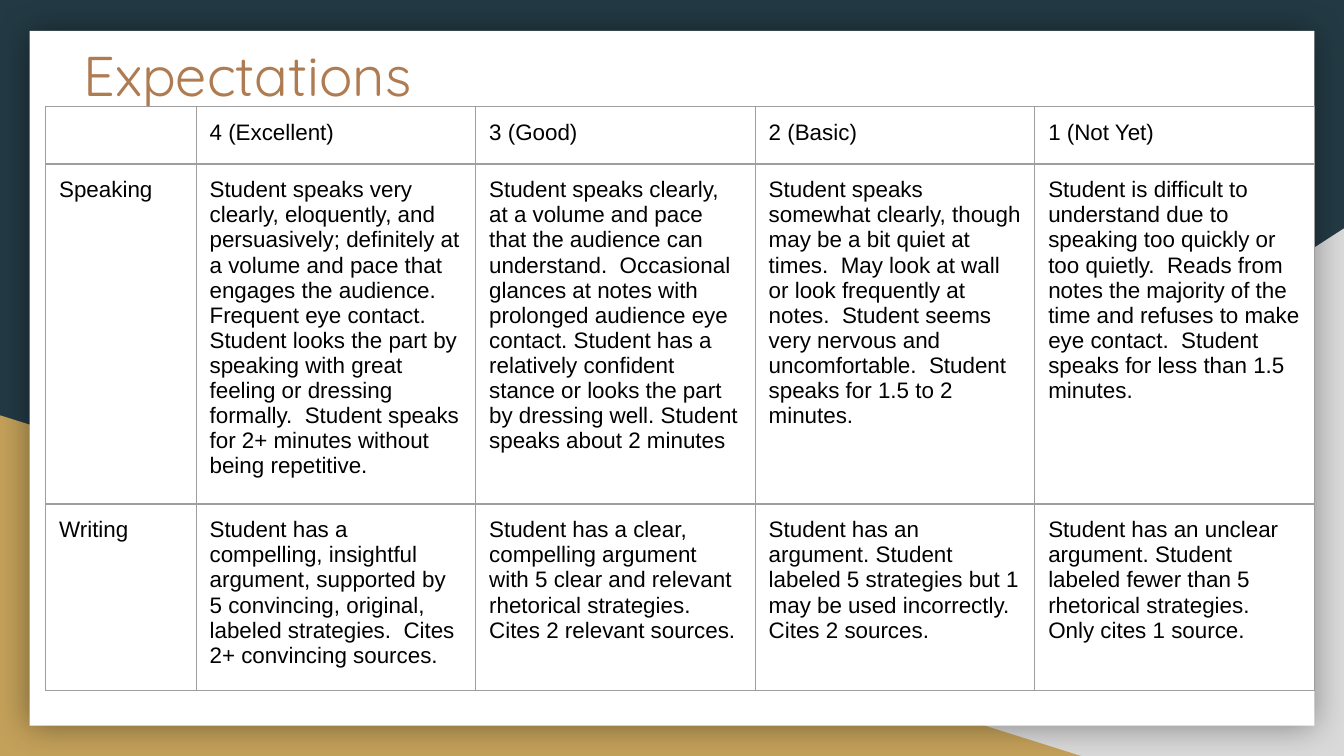
from lxml.etree import SubElement
from pptx import Presentation
from pptx.dml.color import RGBColor
from pptx.enum.shapes import MSO_SHAPE as Shape
from pptx.enum.text import MSO_ANCHOR as Anchor, MSO_AUTO_SIZE as AutoSize, PP_ALIGN as Align
from pptx.oxml import parse_xml
from pptx.oxml.ns import nsdecls, qn
from pptx.util import Inches, Pt

NAVY = RGBColor(0x23, 0x3A, 0x44)
GREY = RGBColor(0xD9, 0xD9, 0xD9)
GOLD = RGBColor(0xC4, 0xA1, 0x5A)
WHITE = RGBColor(0xFF, 0xFF, 0xFF)
COPPER = RGBColor(0xAF, 0x7B, 0x51)
BLACK = RGBColor(0, 0, 0)
RULE = RGBColor(0x9E, 0x9E, 0x9E)

TITLE_FONT = {"name": "Quicksand", "size": Pt(30), "bold": False}
CELL_FONT = {"name": "Arial", "size": Pt(12), "bold": False}
TITLE_FRAME = {"word_wrap": True, "auto_size": AutoSize.NONE, "vertical_anchor": Anchor.TOP}
MARGINS = {f"margin_{side}": Inches(0.1) for side in ("left", "top", "right", "bottom")}

RUBRIC = [
    ["", "4 (Excellent)", "3 (Good)", "2 (Basic)", "1 (Not Yet)"],
    [
        "Speaking",
        "Student speaks very clearly, eloquently, and persuasively; definitely at a volume and pace "
        "that engages the audience.  Frequent eye contact. Student looks the part by speaking with "
        "great feeling or dressing formally.  Student speaks for 2+ minutes without being repetitive.",
        "Student speaks clearly, at a volume and pace that the audience can understand.  Occasional "
        "glances at notes with prolonged audience eye contact. Student has a relatively confident "
        "stance or looks the part by dressing well. Student speaks about 2 minutes",
        "Student speaks somewhat clearly, though may be a bit quiet at times.  May look at wall or "
        "look frequently at notes.  Student seems very nervous and uncomfortable.  Student speaks "
        "for 1.5 to 2 minutes.",
        "Student is difficult to understand due to speaking too quickly or too quietly.  Reads from "
        "notes the majority of the time and refuses to make eye contact.  Student speaks for less "
        "than 1.5 minutes.",
    ],
    [
        "Writing",
        "Student has a compelling, insightful argument, supported by 5 convincing, original, "
        "labeled strategies.  Cites 2+ convincing sources.",
        "Student has a clear, compelling argument with 5 clear and relevant rhetorical strategies. "
        "Cites 2 relevant sources.",
        "Student has an argument. Student labeled 5 strategies but 1 may be used incorrectly.  "
        "Cites 2 sources.",
        "Student has an unclear argument. Student labeled fewer than 5 rhetorical strategies. "
        "Only cites 1 source.",
    ],
]
COLUMN_WIDTHS = [1.12, 2.08, 2.08, 2.08, 2.08]
ROW_HEIGHTS = [0.43, 2.53, 1.39]


def set_all(target, values):
    for key, value in values.items():
        setattr(target, key, value)


prs = Presentation()
prs.slide_width, prs.slide_height = Inches(10), Inches(10 * 9 / 16)
slide = prs.slides.add_slide(prs.slide_layouts[5])
slide.background.fill.solid()
slide.background.fill.fore_color.rgb = NAVY

backdrop = []
for preset, box, color in [
    (Shape.RIGHT_TRIANGLE, (3.92, 1.7, 6.08, 3.93), GREY),
    (Shape.RIGHT_TRIANGLE, (0, 3.09, 8.06, 2.54), GOLD),
    (Shape.RECTANGLE, (0.22, 0.23, 9.56, 5.17), WHITE),
]:
    part = slide.shapes.add_shape(preset, *[Inches(length) for length in box])
    part.shadow.inherit = False
    part.fill.solid()
    part.fill.fore_color.rgb = color
    part.line.fill.background()
    backdrop.append(part)

grey_corner, gold_corner, paper = backdrop
grey_corner.element.spPr.get_or_add_xfrm().set("flipH", "1")
paper.element.spPr.find(qn("a:effectLst")).append(parse_xml(
    f'<a:outerShdw {nsdecls("a")} blurRad="{Pt(18)}" dist="0" algn="ctr" rotWithShape="0">'
    '<a:srgbClr val="000000"><a:alpha val="40000"/></a:srgbClr></a:outerShdw>'
))

title = slide.shapes.title
title.element.getparent().append(title.element)
set_all(title, {"left": Inches(0.52), "top": Inches(0.2),
                "width": Inches(8.21), "height": Inches(0.63)})
title.text_frame.text = "Expectations"
set_all(title.text_frame, TITLE_FRAME | MARGINS)
heading = title.text_frame.paragraphs[0]
heading.alignment = Align.LEFT
set_all(heading.runs[0].font, TITLE_FONT)
heading.runs[0].font.color.rgb = COPPER

rubric = slide.shapes.add_table(
    len(ROW_HEIGHTS), len(COLUMN_WIDTHS), Inches(0.34), Inches(0.79),
    Inches(sum(COLUMN_WIDTHS)), Inches(sum(ROW_HEIGHTS))).table
set_all(rubric, {"first_row": False, "horz_banding": False})
for column, width in zip(rubric.columns, COLUMN_WIDTHS):
    column.width = Inches(width)

for row, height, texts in zip(rubric.rows, ROW_HEIGHTS, RUBRIC):
    row.height = Inches(height)
    for cell, text in zip(row.cells, texts):
        set_all(cell, MARGINS | {"vertical_anchor": Anchor.TOP})
        paragraph = cell.text_frame.paragraphs[0]
        if text:
            run = paragraph.add_run()
            run.text = text
            set_all(run.font, CELL_FONT)
            run.font.color.rgb = BLACK
        else:
            SubElement(paragraph._p, qn("a:endParaRPr"), sz="1200")
        properties = cell._tc.get_or_add_tcPr()
        for edge in ("lnL", "lnR", "lnT", "lnB"):
            properties.append(parse_xml(
                f'<a:{edge} {nsdecls("a")} w="{Pt(0.75)}"><a:solidFill>'
                f'<a:srgbClr val="{RULE}"/></a:solidFill></a:{edge}>'
            ))
        cell.fill.background()

prs.save("out.pptx")
